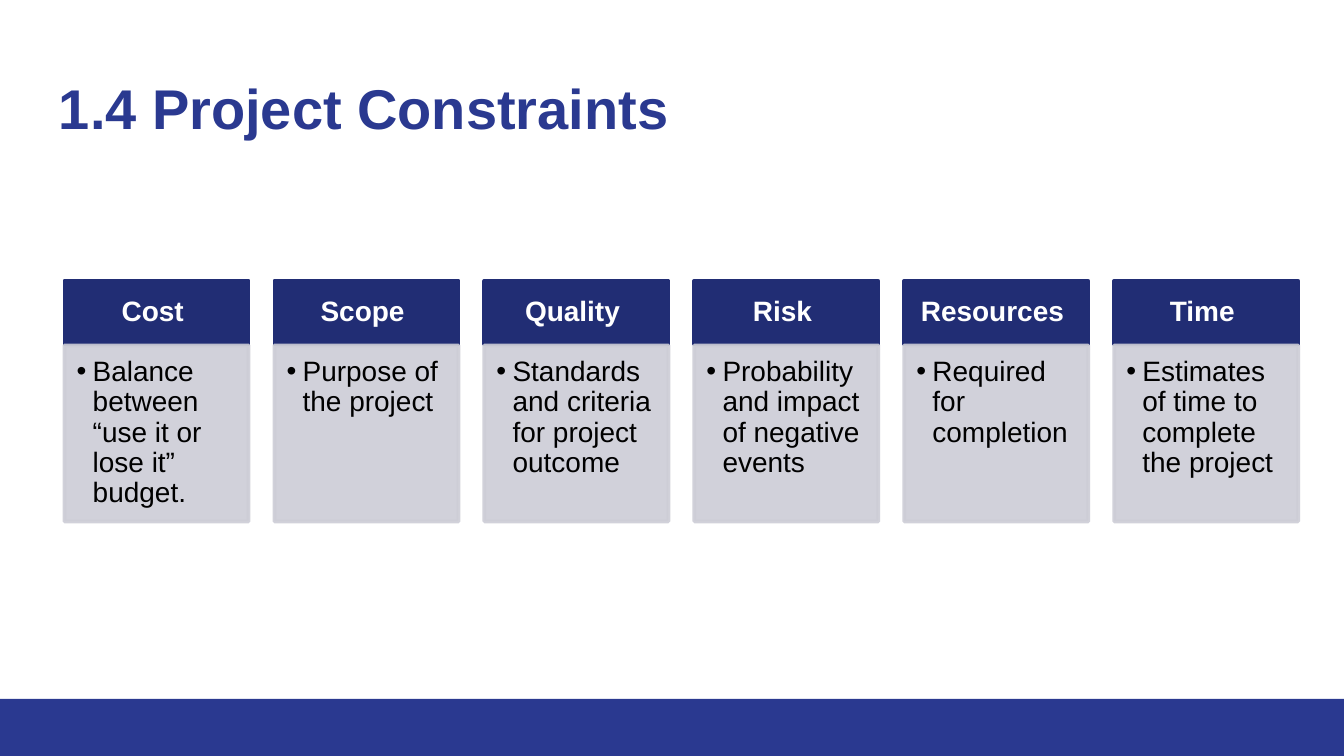
"""Build the project constraints slide: a title and six headed cards."""
from typing import NamedTuple

from lxml import etree
from pptx import Presentation
from pptx.dml.color import RGBColor
from pptx.enum.shapes import MSO_SHAPE
from pptx.enum.text import MSO_ANCHOR, PP_ALIGN
from pptx.oxml.ns import qn
from pptx.util import Inches, Pt

RECT = MSO_SHAPE.RECTANGLE
TOP, MIDDLE = MSO_ANCHOR.TOP, MSO_ANCHOR.MIDDLE
LEFT, CENTER = PP_ALIGN.LEFT, PP_ALIGN.CENTER

FONT = "Arial"
COLORS = {
    "brand": "2A3990",
    "header": "212D74",
    "body": "CDCDD6",
    "white": "FFFFFF",
    "black": "000000",
}
FIRST_LEFT, LAST_LEFT, CARD_WIDTH = 0.48, 8.29, 1.37
HEADER_TOP, HEADER_HEIGHT = 2.09, 0.47
BODY_TOP, BODY_HEIGHT = 2.57, 1.31


class Box(NamedTuple):
    left: float
    top: float
    width: float
    height: float


class Style(NamedTuple):
    size: int
    color: str
    bold: bool
    align: int
    anchor: int
    insets: tuple[float, float, float, float]
    spacing: float


class Constraint(NamedTuple):
    name: str
    detail: str


TITLE = Style(30, "brand", True, LEFT, TOP, (0.1, 0.1, 0.1, 0.1), 1.0)
HEADER = Style(15, "white", True, CENTER, MIDDLE, (0.12, 0.07, 0.12, 0.07), 0.9)
BODY = Style(15, "black", False, LEFT, TOP, (0.09, 0.09, 0.12, 0.13), 0.9)

CONSTRAINTS = [
    Constraint("Cost ", "Balance between “use it or lose it” budget."),
    Constraint("Scope ", "Purpose of the project"),
    Constraint("Quality ", "Standards and criteria for project outcome"),
    Constraint("Risk ", "Probability and impact of negative events"),
    Constraint("Resources ", "Required for completion"),
    Constraint("Time ", "Estimates of time to complete the project"),
]


def rgb(name: str) -> RGBColor:
    return RGBColor.from_string(COLORS[name])


def add_rect(shapes, box: Box, color: str, outlined: bool = True):
    sp = shapes.add_shape(RECT, *map(Inches, box))
    sp.shadow.inherit = False
    sp.fill.solid()
    sp.fill.fore_color.rgb = rgb(color)
    if outlined:
        sp.line.color.rgb = rgb(color)
        sp.line.width = Pt(2)
    else:
        sp.line.fill.background()
    return sp


def add_text(shapes, box: Box, text: str, style: Style):
    tf = shapes.add_textbox(*map(Inches, box)).text_frame
    tf.word_wrap = True
    tf.vertical_anchor = style.anchor
    tf.margin_left, tf.margin_top, tf.margin_right, tf.margin_bottom = map(
        Inches, style.insets)
    p = tf.paragraphs[0]
    p.alignment = style.align
    p.line_spacing = style.spacing
    r = p.add_run()
    r.text = text
    r.font.name = FONT
    r.font.size = Pt(style.size)
    r.font.bold = style.bold
    r.font.color.rgb = rgb(style.color)
    return p


def set_opacity(sp, percent: int) -> None:
    for clr in sp.element.spPr.iter(qn("a:srgbClr")):
        etree.SubElement(clr, qn("a:alpha"), val=str(percent * 1000))


def add_bullet(p, indent: float, color: str) -> None:
    pPr = p._p.get_or_add_pPr()
    pPr.set("marL", str(Inches(indent)))
    pPr.set("indent", str(-Inches(indent)))
    buClr = etree.SubElement(pPr, qn("a:buClr"))
    etree.SubElement(buClr, qn("a:srgbClr"), val=COLORS[color])
    etree.SubElement(pPr, qn("a:buFont"), typeface=FONT)
    etree.SubElement(pPr, qn("a:buChar"), char="•")


def add_card(shapes, left: float, item: Constraint) -> None:
    header = Box(left, HEADER_TOP, CARD_WIDTH, HEADER_HEIGHT)
    add_rect(shapes, header, "header")
    add_text(shapes, header, item.name, HEADER)
    body = Box(left, BODY_TOP, CARD_WIDTH, BODY_HEIGHT)
    set_opacity(add_rect(shapes, body, "body"), 90)
    add_bullet(add_text(shapes, body, item.detail, BODY), 0.12, BODY.color)


def main() -> None:
    prs = Presentation()
    prs.slide_width = Inches(10)
    prs.slide_height = prs.slide_width * 9 // 16
    s = prs.slides.add_slide(prs.slide_layouts[6])
    add_rect(s.shapes, Box(0, 5.2, 10, 0.43), "brand", outlined=False)
    add_text(s.shapes, Box(0.34, 0.45, 9.32, 0.66),
             "1.4 Project Constraints", TITLE)
    cards = s.shapes.add_group_shape()
    pitch = (LAST_LEFT - FIRST_LEFT) / (len(CONSTRAINTS) - 1)
    for i, item in enumerate(CONSTRAINTS):
        add_card(cards.shapes, FIRST_LEFT + i * pitch, item)
    prs.save("out.pptx")


if __name__ == "__main__":
    main()
